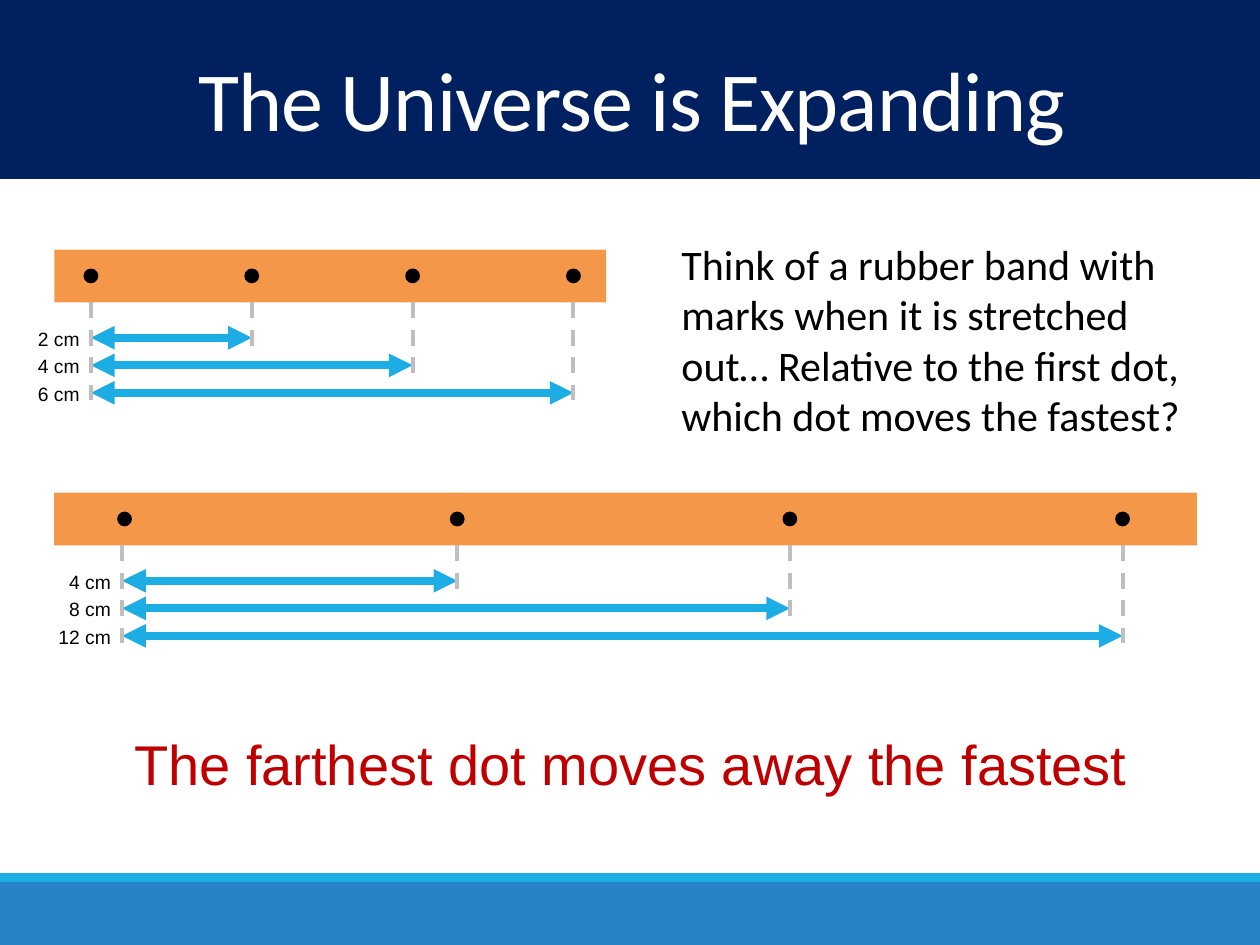
import dataclasses

import pptx
import pptx.dml.color
import pptx.enum.dml
import pptx.enum.shapes
import pptx.enum.text
import pptx.oxml
import pptx.oxml.ns
import pptx.util

Pt = pptx.util.Pt
SHAPES = pptx.enum.shapes.MSO_SHAPE
ALIGN = pptx.enum.text.PP_ALIGN


@dataclasses.dataclass(frozen=True)
class Theme:
    white: str = "FFFFFF"
    black: str = "000000"
    navy: str = "002060"
    footer: str = "2683C6"
    accent: str = "1CADE4"
    rubber: str = "F59749"
    guide: str = "BFBFBF"
    answer: str = "C00000"
    heading_font: str = "Calibri"
    label_font: str = "Arial"
    title_size: int = 48
    answer_size: int = 32
    body_size: int = 24
    label_size: int = 11


def rgb(value):
    return pptx.dml.color.RGBColor.from_string(value)


class Slide:
    """The current slide and its style; all lengths are in points."""

    def __init__(self, page, theme):
        self.page = page
        self.theme = theme

    def shape(self, kind, left, top, width, height, fill, line=None, group=None):
        parent = group or self.page
        item = parent.shapes.add_shape(kind, Pt(left), Pt(top), Pt(width), Pt(height))
        item.shadow.inherit = False
        item.fill.solid()
        item.fill.fore_color.rgb = rgb(fill)
        if line:
            item.line.color.rgb = rgb(line)
            item.line.width = Pt(1.25)
        else:
            item.line.fill.background()
        return item

    def text(self, words, left, top, width, height, size, font, color,
             align=ALIGN.LEFT, fill=None, spacing=None, tracking=None):
        box = self.page.shapes.add_textbox(Pt(left), Pt(top), Pt(width), Pt(height))
        if fill:
            box.fill.solid()
            box.fill.fore_color.rgb = rgb(fill)
        frame = box.text_frame
        frame.word_wrap = True
        frame.vertical_anchor = pptx.enum.text.MSO_ANCHOR.MIDDLE
        frame.text = words
        para = frame.paragraphs[0]
        para.alignment = align
        if spacing:
            para.line_spacing = spacing
        span = para.runs[0]
        span.font.size = Pt(size)
        span.font.name = font
        span.font.color.rgb = rgb(color)
        if tracking:
            span._r.get_or_add_rPr().set("spc", str(round(tracking * 100)))

    def line(self, x1, y1, x2, y2, color, width):
        item = self.page.shapes.add_connector(
            pptx.enum.shapes.MSO_CONNECTOR.STRAIGHT, Pt(x1), Pt(y1), Pt(x2), Pt(y2))
        item.line.color.rgb = rgb(color)
        item.line.width = Pt(width)
        item._element.spPr.append(pptx.oxml.parse_xml(
            f"<a:effectLst {pptx.oxml.ns.nsdecls('a')}/>"))
        return item

    def guide(self, x, top, bottom):
        item = self.line(x, top, x, bottom, self.theme.guide, 2.25)
        item.line.dash_style = pptx.enum.dml.MSO_LINE.DASH

    def double_arrow(self, start, end, y):
        item = self.line(start, y, end, y, self.theme.accent, 4.5)
        for tag in ("headEnd", "tailEnd"):
            item.line._get_or_add_ln().append(pptx.oxml.parse_xml(
                f"<a:{tag} {pptx.oxml.ns.nsdecls('a')} type='triangle'/>"))

    def rubber_band(self, top, width, first_dot, pitch, origin, distances):
        """A band with equally spaced dots, measured from the origin guide."""
        theme = self.theme
        height, dot = 30.2, 7.2
        centres = [first_dot + pitch * i for i in range(len(distances) + 1)]
        group = self.page.shapes.add_group_shape()
        self.shape(SHAPES.RECTANGLE, 31, top, width, height, theme.rubber, group=group)
        for x in centres:
            self.shape(SHAPES.OVAL, x - dot / 2, top + 11.5, dot, dot,
                       theme.black, theme.black, group)

        arrow_ys = [top + 50.4 + 15.75 * i for i in range(len(distances))]
        for y, distance in zip(arrow_ys, distances):
            self.text(f"{distance} cm", origin - 46.8, y - 10.1, 47.5, 20.9,
                      theme.label_size, theme.label_font, theme.black,
                      ALIGN.RIGHT, theme.white)
        for x, y in zip(centres[1:], arrow_ys):
            self.double_arrow(origin, x, y)
        bottom = top + height
        self.guide(origin, bottom, bottom + 58.3)
        for i, x in enumerate(centres[1:]):
            self.guide(x, bottom, bottom + 29.5 + 14.4 * i)


def main():
    deck = pptx.Presentation()
    deck.slide_width, deck.slide_height = Pt(720), Pt(540)
    theme = Theme()
    slide = Slide(deck.slides.add_slide(deck.slide_layouts[6]), theme)

    for top, height, color in ((504, 36, theme.footer), (499, 5, theme.accent),
                               (0, 102.2, theme.navy)):
        slide.shape(SHAPES.RECTANGLE, 0, top, 720, height, color)
    slide.text("The Universe is Expanding", 2, 30.2, 718, 60.5, theme.title_size,
               theme.heading_font, theme.white, ALIGN.CENTER, spacing=0.85, tracking=-0.5)

    slide.rubber_band(281.5, 653, 71.2, 190.1, 69.8, (4, 8, 12))
    slide.text("The farthest dot moves away the fastest", 54, 413.3, 613.4, 46,
               theme.answer_size, theme.label_font, theme.answer, ALIGN.CENTER, theme.white)
    slide.rubber_band(142.6, 315.4, 52, 91.9, 52, (2, 4, 6))
    slide.text("Think of a rubber band with marks when it is stretched out… "
               "Relative to the first dot, which dot moves the fastest?",
               382.3, 131.8, 316.8, 123.8, theme.body_size, theme.heading_font, theme.black)

    deck.save("out.pptx")


if __name__ == "__main__":
    main()
